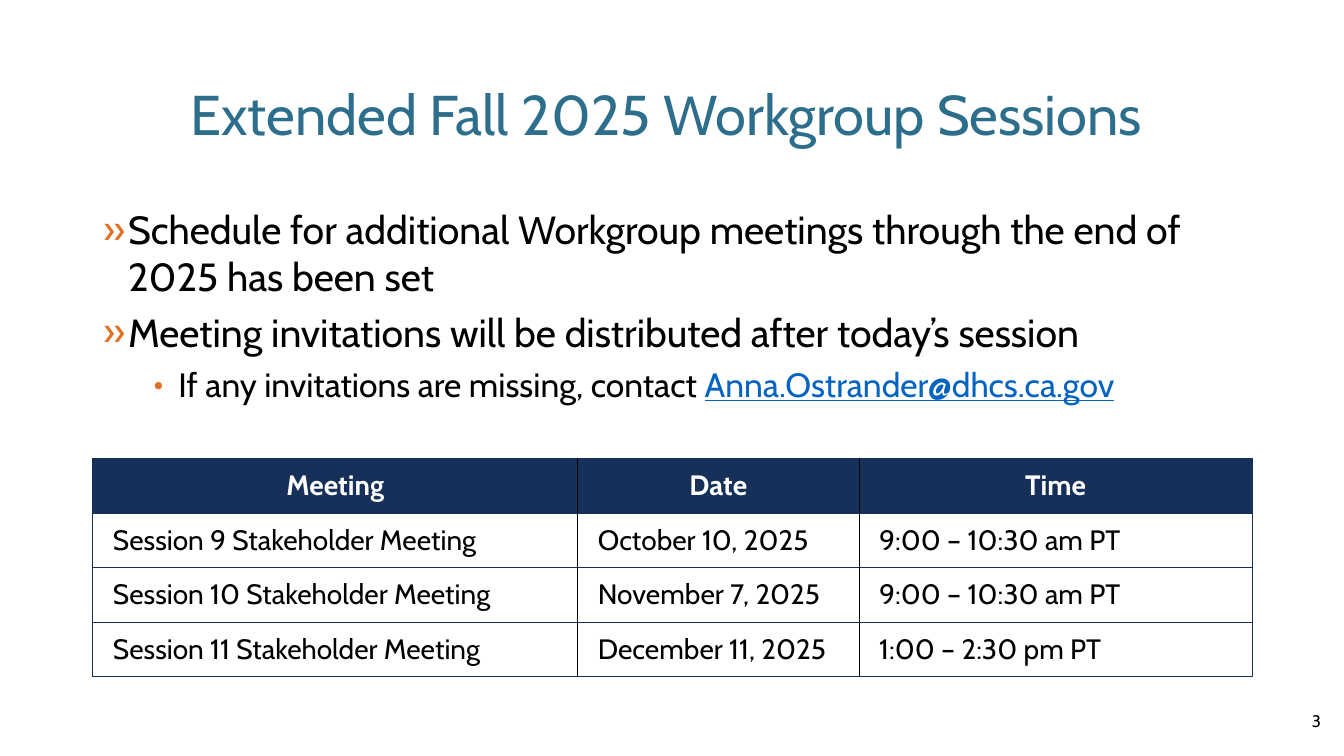
from pptx import Presentation
from pptx.dml.color import RGBColor
from pptx.enum.text import MSO_ANCHOR as Anchor, MSO_AUTO_SIZE as AutoSize, PP_ALIGN as Align
from pptx.oxml import parse_xml
from pptx.oxml.ns import nsdecls
from pptx.util import Inches, Pt

# Content
TITLE = "Extended Fall 2025 Workgroup Sessions "
# level, size, spans of (text, colour, underline)
BULLETS = [
    (0, 28, [("Schedule for additional Workgroup meetings through the end of 2025 has been set",
              "black", False)]),
    (0, 28, [("Meeting invitations will be distributed after today’s session", "black", False)]),
    (1, 24, [("If any invitations are missing, contact ", "black", False),
             ("Anna.Ostrander@dhcs.ca.gov", "link", True)]),
]
SESSIONS = [
    ("Meeting", "Date", "Time"),
    ("Session 9 Stakeholder Meeting", "October 10, 2025", "9:00 – 10:30 am PT"),
    ("Session 10 Stakeholder Meeting", "November 7, 2025", "9:00 – 10:30 am PT"),
    ("Session 11 Stakeholder Meeting", "December 11, 2025", "1:00 – 2:30 pm PT"),
]
PAGE_NUMBER = "3"

# Style
FONT = "Cabin"
COLORS = {"title": "2D6E8D", "black": "000000", "white": "FFFFFF",
          "navy": "173059", "orange": "E37124", "link": "0563C1"}
LEVELS = [("»", 0.25), ("•", 0.75)]  # bullet sign and left indent
HANGING = 0.25
LEFT, WIDTH = 0.92, 11.5
COLUMNS = [4.81, 2.79, 3.9]
ROW_HEIGHT = 0.54
CELL_FORMAT = {"margin_left": Inches(0.2), "margin_right": Inches(0.2),
               "margin_top": Inches(0.1), "margin_bottom": Inches(0.1),
               "vertical_anchor": Anchor.TOP}


def set_all(target, values):
    for name, value in values.items():
        setattr(target, name, value)


def add_span(para, text, size, color, bold=False, underline=False):
    span = para.add_run()
    span.text = text
    set_all(span.font, {"name": FONT, "size": Pt(size), "bold": bold, "underline": underline})
    span.font.color.rgb = RGBColor.from_string(COLORS[color])


def place(shape, left, top, width, height):
    set_all(shape, {"left": Inches(left), "top": Inches(top),
                    "width": Inches(width), "height": Inches(height)})


def add_bullet(para, level):
    sign, indent = LEVELS[level]
    props = para._p.get_or_add_pPr()
    props.set("marL", str(Inches(indent)))
    props.set("indent", str(-Inches(HANGING)))
    ns = nsdecls("a")
    for xml in (f'<a:buClr {ns}><a:srgbClr val="{COLORS["orange"]}"/></a:buClr>',
                f'<a:buFont {ns} typeface="{FONT}"/>',
                f'<a:buChar {ns} char="{sign}"/>'):
        props.append(parse_xml(xml))


def add_borders(cell, column):
    sides = {"L": "black" if column > 0 else "navy",
             "R": "black" if column < len(COLUMNS) - 1 else "navy",
             "T": "navy", "B": "navy"}
    props = cell._tc.get_or_add_tcPr()
    for side, color in sides.items():
        props.append(parse_xml(
            f'<a:ln{side} {nsdecls("a")} w="{Pt(0.5)}"><a:solidFill>'
            f'<a:srgbClr val="{COLORS[color]}"/></a:solidFill></a:ln{side}>'))


def main():
    deck = Presentation()
    deck.slide_width, deck.slide_height = Inches(13.33), Inches(7.5)
    page = deck.slides.add_slide(deck.slide_layouts[1])

    # Title
    title = page.shapes.title
    place(title, LEFT, 0.4, WIDTH, 1.45)
    set_all(title.text_frame, {"vertical_anchor": Anchor.MIDDLE, "auto_size": AutoSize.NONE})
    para = title.text_frame.paragraphs[0]
    para.alignment = Align.CENTER
    add_span(para, TITLE, 40, "title")

    # Bullet list
    body = page.placeholders[1]
    place(body, LEFT, 1.99, WIDTH, 4.89)
    frame = body.text_frame
    set_all(frame, {"vertical_anchor": Anchor.TOP, "auto_size": AutoSize.NONE})
    for index, (level, size, spans) in enumerate(BULLETS):
        para = frame.add_paragraph() if index else frame.paragraphs[0]
        add_bullet(para, level)
        set_all(para, {"level": level, "space_before": Pt(0), "space_after": Pt(6)})
        for text, color, underline in spans:
            add_span(para, text, size, color, underline=underline)

    # Session table
    table = page.shapes.add_table(
        len(SESSIONS), len(COLUMNS), Inches(LEFT), Inches(4.55),
        Inches(WIDTH), Inches(ROW_HEIGHT * len(SESSIONS))).table
    table.horz_banding = False
    for column, width in zip(table.columns, COLUMNS):
        column.width = Inches(width)
    for row, texts in enumerate(SESSIONS):
        header = row == 0
        for column, text in enumerate(texts):
            cell = table.cell(row, column)
            set_all(cell, CELL_FORMAT)
            add_borders(cell, column)
            cell.fill.solid()
            cell.fill.fore_color.rgb = RGBColor.from_string(COLORS["navy" if header else "white"])
            para = cell.text_frame.paragraphs[0]
            para.alignment = Align.CENTER if header else Align.LEFT
            add_span(para, text, 20, "white" if header else "black", bold=header)

    # Page number
    box = page.shapes.add_textbox(Inches(10.2), Inches(6.95), Inches(3), Inches(0.4))
    set_all(box.text_frame, {"word_wrap": True, "vertical_anchor": Anchor.MIDDLE})
    para = box.text_frame.paragraphs[0]
    para.alignment = Align.RIGHT
    add_span(para, PAGE_NUMBER, 12, "black")

    deck.save("out.pptx")


if __name__ == "__main__":
    main()
